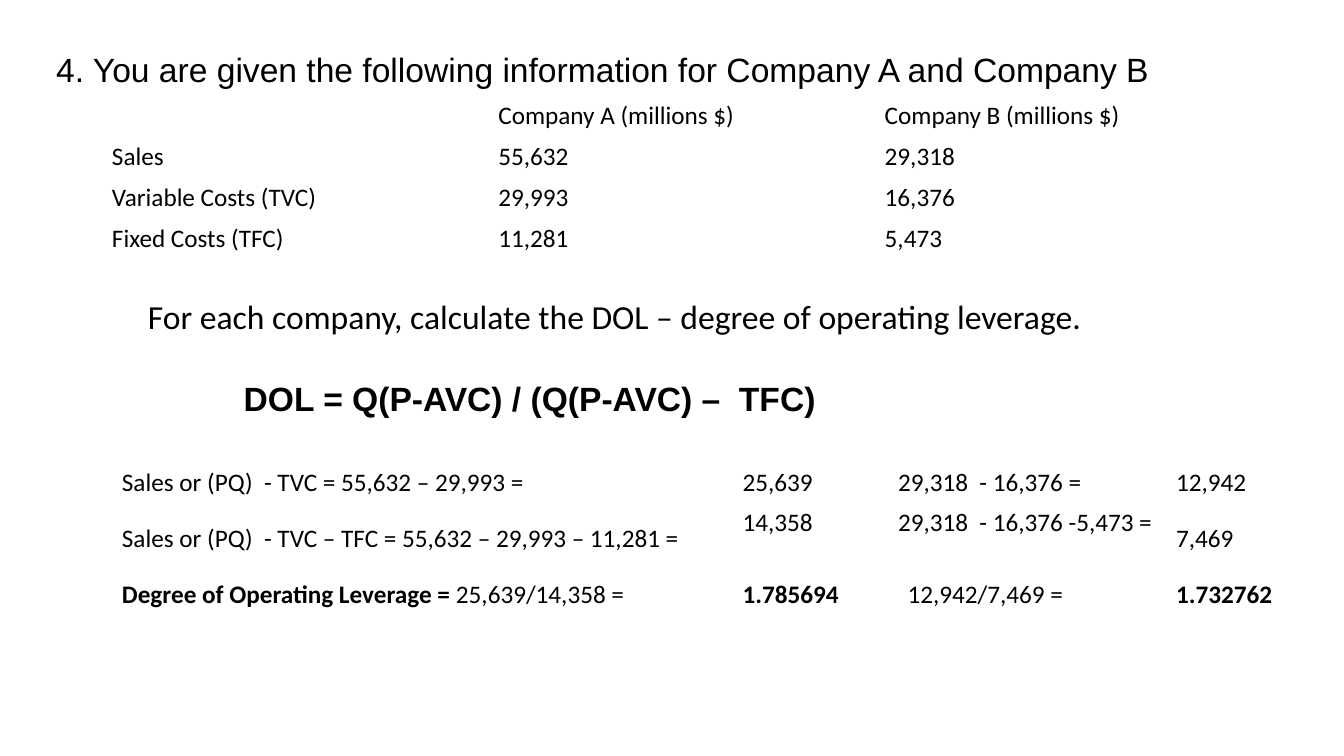
from pptx import Presentation, util as u
from pptx.dml.color import RGBColor
from pptx.enum import text
from lxml import etree

COLORS = {"ink": "000000"}
A = "{http://schemas.openxmlformats.org/drawingml/2006/main}"


class SlideBuilder:
    def __init__(self, slide):
        self.slide = slide

    def add_runs(self, paragraph, runs, font, size):
        for wording, bold in runs:
            run = paragraph.add_run()
            run.text = wording
            style = {"name": font, "size": u.Pt(size), "bold": bold}
            for key, value in style.items():
                setattr(run.font, key, value)
            run.font.color.rgb = RGBColor.from_string(COLORS["ink"])

    def line(self, wording, box, font, bold=False, spacing=1.0):
        frame = self.slide.shapes.add_textbox(*map(u.Pt, box)).text_frame
        frame.word_wrap = True
        frame.auto_size = text.MSO_AUTO_SIZE.SHAPE_TO_FIT_TEXT
        paragraph = frame.paragraphs[0]
        paragraph.line_spacing = spacing
        self.add_runs(paragraph, [(wording, bold)], font, 24)

    def tab_stop(self, paragraph, position):
        properties = paragraph._p.get_or_add_pPr()
        stops = etree.Element(A + "tabLst")
        etree.SubElement(stops, A + "tab", pos=str(u.Pt(position)), algn="l")
        properties.insert(0, stops)

    def table(self, rows, left, top, widths, heights, tabs=None):
        table = self.slide.shapes.add_table(
            len(rows), len(widths), u.Pt(left), u.Pt(top),
            u.Pt(sum(widths)), u.Pt(sum(heights))).table
        for key in ("first_row", "horz_banding"):
            setattr(table, key, False)
        for column, width in zip(table.columns, widths):
            column.width = u.Pt(width)
        for r, (row, height) in enumerate(zip(rows, heights)):
            table.rows[r].height = u.Pt(height)
            for c, content in enumerate(row):
                cell = table.cell(r, c)
                cell.fill.background()
                cell.vertical_anchor = text.MSO_ANCHOR.MIDDLE
                paragraph = cell.text_frame.paragraphs[0]
                paragraph.font.size = u.Pt(18)
                runs = [(content, False)] if isinstance(content, str) else content
                if tabs and c == 1:
                    self.tab_stop(paragraph, tabs[r])
                self.add_runs(paragraph, runs, "Calibri", 18)
        return table


def main():
    deck = Presentation()
    deck.slide_width, deck.slide_height = u.Pt(960), u.Pt(540)
    builder = SlideBuilder(deck.slides.add_slide(deck.slide_layouts[6]))

    company_figures = [
        ("", "Company A (millions $)", "Company B (millions $)"),
        ("Sales", "55,632", "29,318"),
        ("Variable Costs (TVC)", "29,993", "16,376"),
        ("Fixed Costs (TFC)", "11,281", "5,473"),
    ]
    builder.table(company_figures, 72.8, 68.4, [276] * 3, [29.2] * 4)

    leverage_steps = [
        ("Sales or (PQ)  - TVC = 55,632 – 29,993 =",
         "25,639\t29,318  - 16,376 =", "12,942"),
        ("Sales or (PQ)  - TVC – TFC = 55,632 – 29,993 – 11,281 =",
         "14,358\t29,318  - 16,376 -5,473 =", "7,469"),
        ([("Degree of Operating Leverage = ", True), ("25,639/14,358 =", False)],
         [("1.785694\t", True), ("12,942/7,469 =", False)],
         [("1.732762", True)]),
    ]
    leverage = builder.table(leverage_steps, 79.9, 330, [443.4, 309.6, 100.8],
                             [29.2, 51.2, 29.2], tabs=[111, 111, 117.8])
    leverage.cell(1, 1).vertical_anchor = text.MSO_ANCHOR.TOP

    builder.line("For each company, calculate the DOL – degree of operating leverage.",
                 (98.6, 208.1, 693.4, 36), "Calibri")
    builder.line("4. You are given the following information for Company A and Company B",
                 (33.1, 31.7, 816.5, 36), "Arial")
    builder.line("DOL = Q(P-AVC) / (Q(P-AVC) –  TFC)",
                 (167, 270, 480.2, 33.1), "Arial", bold=True, spacing=0.9)
    deck.save("out.pptx")


if __name__ == "__main__":
    main()
